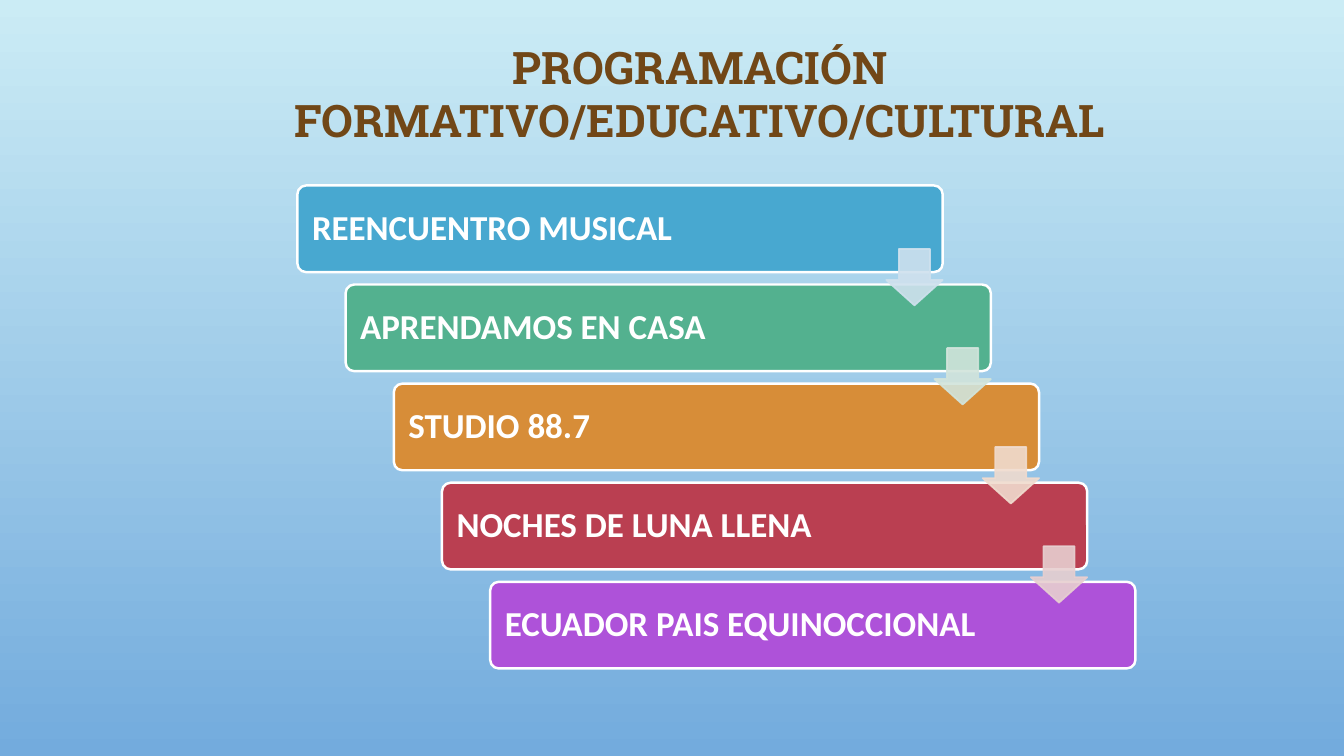
from lxml import etree
from pptx import Presentation
from pptx.dml.color import RGBColor
from pptx.enum.shapes import MSO_SHAPE
from pptx.enum.text import MSO_ANCHOR, PP_ALIGN
from pptx.oxml.ns import qn
from pptx.util import Inches, Pt

BAR, ARROW = MSO_SHAPE.ROUNDED_RECTANGLE, MSO_SHAPE.DOWN_ARROW
TOP, MIDDLE = MSO_ANCHOR.TOP, MSO_ANCHOR.MIDDLE
LEFT, CENTER = PP_ALIGN.LEFT, PP_ALIGN.CENTER

TITLE = "PROGRAMACIÓN FORMATIVO/EDUCATIVO/CULTURAL"
PROGRAMS = [
    ("REENCUENTRO MUSICAL", "48A8D0"),
    ("APRENDAMOS EN CASA", "53B18F"),
    ("STUDIO 88.7", "D78D38"),
    ("NOCHES DE LUNA LLENA", "BA3F51"),
    ("ECUADOR PAIS EQUINOCCIONAL", "AE52D9"),
]
ARROW_COLORS = ["CFE1EE", "D1E4DB", "F0DBCE", "E7CFD0"]
BACKGROUND = ["CBECF5", "73ABDD"]

# Inches: each step of the staircase moves right and down by STEP
STEP = (0.478, 0.983)
BAR_START, BAR_SIZE = (2.95, 1.84), (6.4, 0.86)
ARROW_START, ARROW_SIZE = (8.79, 2.47), (0.56, 0.56)


def rgb(value):
    return RGBColor.from_string(value)


def set_text(tf, text, font, size, color, align, anchor):
    tf.text = text
    tf.word_wrap = True
    tf.vertical_anchor = anchor
    p = tf.paragraphs[0]
    p.alignment = align
    p.line_spacing = 1.0 if anchor == TOP else 0.9
    r = p.runs[0]
    r.font.name, r.font.size, r.font.bold = font, Pt(size), True
    r.font.color.rgb = rgb(color)


def add_step(shapes, kind, row, start, size, adjustments, fill, line, width):
    """Add the shape that stands on the given row of the staircase."""
    place = [Inches(a + row * d) for a, d in zip(start, STEP)]
    sp = shapes.add_shape(kind, *place, *map(Inches, size))
    sp.shadow.inherit = False
    for i, value in enumerate(adjustments):
        sp.adjustments[i] = value
    sp.fill.solid()
    sp.fill.fore_color.rgb = rgb(fill)
    sp.line.color.rgb = rgb(line)
    sp.line.width = Pt(width)
    return sp


def set_opacity(sp, percent):
    for color in sp._element.spPr.iter(qn("a:srgbClr")):
        etree.SubElement(color, qn("a:alpha"), val=str(percent * 1000))


prs = Presentation()
prs.slide_width, prs.slide_height = Inches(13.33), Inches(7.5)
s = prs.slides.add_slide(prs.slide_layouts[5])

fill = s.background.fill
fill.gradient()
fill.gradient_angle = 270
for stop, color in zip(fill.gradient_stops, BACKGROUND):
    stop.color.rgb = rgb(color)

title = s.shapes.title
title.left, title.top = Inches(1.08), Inches(0.34)
title.width, title.height = Inches(11.73), Inches(1.18)
set_text(title.text_frame, TITLE, "Roboto Slab", 32, "714717", CENTER, TOP)

stairs = s.shapes.add_group_shape().shapes
for row, (name, color) in enumerate(PROGRAMS):
    sp = add_step(stairs, BAR, row, BAR_START, BAR_SIZE, [0.1],
                  color, "FFFFFF", 1.75)
    tf = sp.text_frame
    tf.margin_left = Inches(0.12)
    set_text(tf, name, "Calibri", 25, "FFFFFF", LEFT, MIDDLE)

for row, color in enumerate(ARROW_COLORS):
    sp = add_step(stairs, ARROW, row, ARROW_START, ARROW_SIZE, [0.55, 0.45],
                  color, color, 1.25)
    set_opacity(sp, 90)

prs.save("out.pptx")
